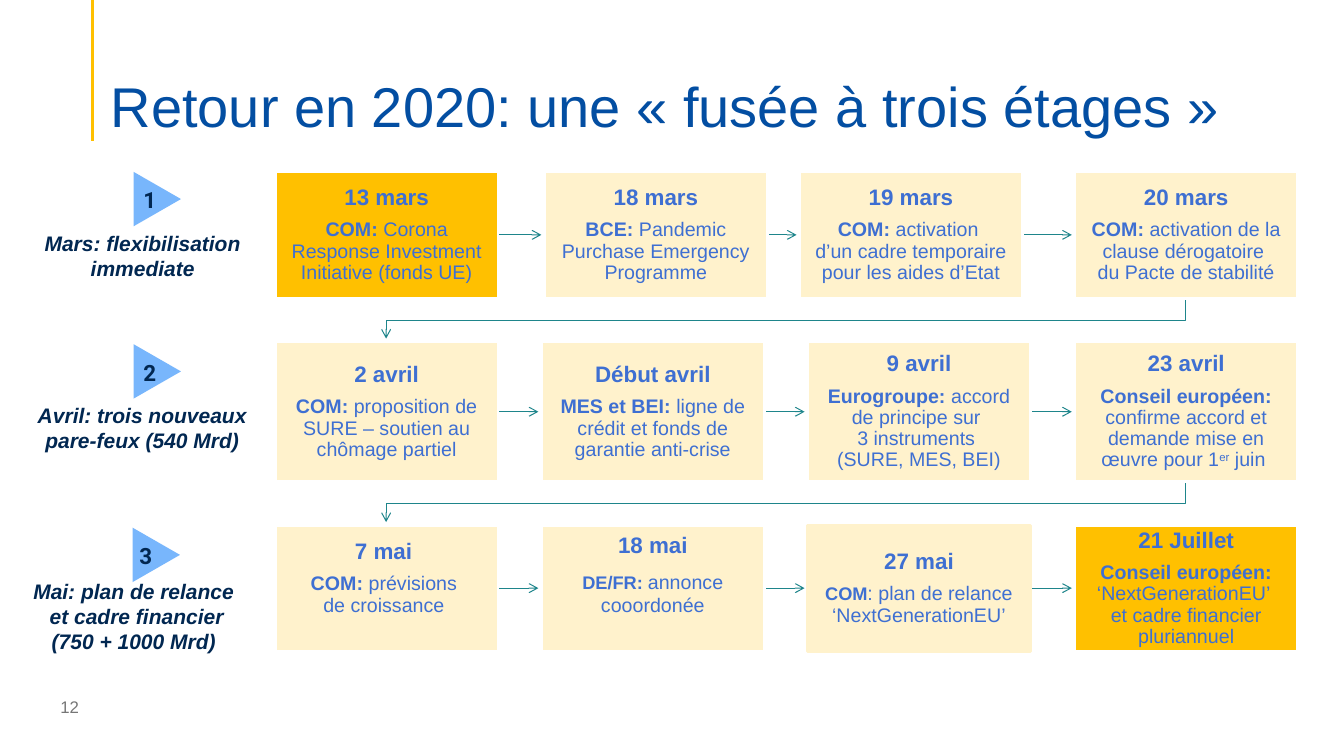
import pptx
import pptx.util
import pptx.dml.color
import pptx.enum.shapes
import pptx.enum.text
import pptx.oxml
import pptx.oxml.ns

PX = 9144  # 100 px to the inch
COLORS = {
    "title": "034EA2", "gold": "FFC000", "cream": "FFF2CC", "white": "FFFFFF",
    "card text": "3E6FD2", "arrow": "1E858B", "badge": "78B6FC",
    "stage text": "012751", "page number": "767676",
}
SHAPES = pptx.enum.shapes.MSO_SHAPE
ALIGN = pptx.enum.text.PP_ALIGN
ANCHOR = pptx.enum.text.MSO_ANCHOR
qn = pptx.oxml.ns.qn

CARD_WIDTH = 221
EVEN_LEFTS = (273, 537, 801, 1066)
ARROW_GAP = 3

# Stage: label box, label, badge corner, number left, row top, row height, card lefts, cards
# Card: date, lead, body, then optional settings; ^ surrounds superscript
STAGES = [
    ((20, 224, 243, 61), "Mars: flexibilisation immediate", (129, 174), 90,
     170, 126, (273, 540, 793, 1066), [
        ("13 mars", "COM: ", "Corona Response Investment Initiative (fonds UE)", {"fill": "gold"}),
        ("18 mars", "BCE: ", "Pandemic Purchase Emergency Programme", {}),
        ("19 mars", "COM: ", "activation \nd’un cadre temporaire pour les aides d’Etat", {}),
        ("20 mars", "COM: ", "activation de la clause dérogatoire \ndu Pacte de stabilité", {}),
     ]),
    ((26, 394, 236, 61), "Avril: trois nouveaux \vpare-feux (540 Mrd) ", (129, 345), 90,
     339, 139, EVEN_LEFTS, [
        ("2 avril", "COM: ", "proposition de SURE – soutien au chômage partiel", {}),
        ("Début avril", "MES et BEI: ", "ligne de crédit et fonds de garantie anti-crise", {}),
        ("9 avril", "Eurogroupe: ",
         "accord de principe sur \n3 instruments \n(SURE, MES, BEI)", {}),
        ("23 avril", "Conseil européen: ",
         "confirme accord et demande mise en œuvre pour 1^er^ juin ", {}),
     ]),
    ((20, 569, 231, 86), "Mai: plan de relance \vet cadre financier\v(750 + 1000 Mrd) ",
     (128, 527), 86, 521, 125, EVEN_LEFTS, [
        ("7 mai ", "COM: ", "prévisions \nde croissance ", {"lift": 20}),
        ("18 mai", "DE/FR: ", "annonce cooordonée",
         {"lift": 28, "lead_size": 13, "spacing": 1, "gap": 8}),
        ("27 mai", "COM", ": plan de relance ‘NextGenerationEU’",
         {"lead_size": 13, "border": "cream"}),
        ("21 Juillet", "Conseil européen: ",
         "‘NextGenerationEU’ \net cadre financier pluriannuel", {"fill": "gold"}),
     ]),
]


def rgb(name):
    return pptx.dml.color.RGBColor.from_string(COLORS[name])


def scaled(*lengths):
    return [length * PX for length in lengths]


def style(span, size, color, bold=False, italic=False, face="Arial"):
    font = span.font
    font.name, font.size, font.bold, font.italic = face, pptx.util.Pt(size), bold, italic
    font.color.rgb = rgb(color)


def size_breaks(para, size):
    for line_break in para._p.findall(qn("a:br")):
        properties = pptx.oxml.parse_xml(
            f'<a:rPr {pptx.oxml.ns.nsdecls("a")} sz="{size * 100}"/>')
        line_break.append(properties)


def add_label(page, box, text, size, color, align=ALIGN.LEFT, anchor=ANCHOR.TOP,
              spacing=1, bottom=5, **font):
    label = page.shapes.add_textbox(*scaled(*box))
    frame = label.text_frame
    frame.word_wrap = True
    frame.vertical_anchor = anchor
    frame.margin_bottom = bottom * PX
    frame.text = text
    para = frame.paragraphs[0]
    para.alignment = align
    para.line_spacing = spacing
    for span in para.runs:
        style(span, size, color, **font)
    size_breaks(para, size)


def finish_arrow(line_shape):
    line_shape.line.color.rgb = rgb("arrow")
    line_shape.line.width = pptx.util.Pt(0.75)
    namespace = pptx.oxml.ns.nsdecls("a")
    line_shape.line._get_or_add_ln().append(
        pptx.oxml.parse_xml(f'<a:tailEnd {namespace} type="arrow"/>'))


def add_straight_arrow(page, start, end, y):
    arrow = page.shapes.add_connector(
        pptx.enum.shapes.MSO_CONNECTOR.STRAIGHT, *scaled(start, y, end, y))
    finish_arrow(arrow)
    arrow._element.spPr.append(
        pptx.oxml.parse_xml(f'<a:effectLst {pptx.oxml.ns.nsdecls("a")}/>'))


def add_return_arrow(page, start_x, start_y, end_x, end_y):
    turn_y = start_y + 22
    builder = page.shapes.build_freeform(start_x, start_y, scale=PX)
    builder.add_line_segments(
        [(start_x, turn_y), (end_x, turn_y), (end_x, end_y)], close=False)
    arrow = builder.convert_to_shape()
    arrow.shadow.inherit = False
    arrow.fill.background()
    finish_arrow(arrow)


def add_card(page, box, date, lead, body, fill="cream", border="white", lift=0,
             lead_size=14, spacing=0.9, gap=7):
    card = page.shapes.add_shape(SHAPES.RECTANGLE, *scaled(*box))
    card.shadow.inherit = False
    card.fill.solid()
    card.fill.fore_color.rgb = rgb(fill)
    card.line.color.rgb = rgb(border)
    card.line.width = pptx.util.Pt(2)
    frame = card.text_frame
    frame.word_wrap = True
    frame.vertical_anchor = ANCHOR.MIDDLE
    frame.margin_left = frame.margin_right = frame.margin_top = 12 * PX
    frame.margin_bottom = (12 + lift) * PX
    frame.text = f"{date}\n{lead}"
    heading, para = frame.paragraphs
    heading.space_after = pptx.util.Pt(gap)
    for item in (heading, para):
        item.alignment = ALIGN.CENTER
        item.line_spacing = spacing
    style(heading.runs[0], 16, "card text", bold=True)
    style(para.runs[0], lead_size, "card text", bold=True)
    for row, line in enumerate(body.split("\n")):
        if row:
            para.add_line_break()
        for part, text in enumerate(line.split("^")):
            span = para.add_run()
            span.text = text
            style(span, 14, "card text")
            if part % 2:
                span._r.get_or_add_rPr().set("baseline", "30000")
    size_breaks(para, 14)


def add_card_row(page, top, height, lefts, cards):
    for left, following in zip(lefts, lefts[1:]):
        add_straight_arrow(page, left + CARD_WIDTH, following - ARROW_GAP, top + height / 2)
    for left, (date, lead, body, settings) in zip(lefts, cards):
        add_card(page, (left, top, CARD_WIDTH, height), date, lead, body, **settings)


def add_stage_label(page, box, text, badge, number_left, number):
    add_label(page, box, text, 15, "stage text", ALIGN.CENTER, bold=True, italic=True)
    left, top = badge
    triangle = page.shapes.add_shape(
        SHAPES.ISOSCELES_TRIANGLE, *scaled(left, top, 54, 47))
    triangle.rotation = 90
    triangle.shadow.inherit = False
    triangle.fill.solid()
    triangle.fill.fore_color.rgb = rgb("badge")
    triangle.line.fill.background()
    add_label(page, (number_left, top + 6, 117, 37), str(number), 16, "stage text",
              ALIGN.CENTER, bold=True, face="Roboto")


def add_header(page, box):
    left, top, width, height = box
    rule = page.shapes.add_connector(
        pptx.enum.shapes.MSO_CONNECTOR.STRAIGHT, *scaled(left - 8, 0, left - 8, top + height + 1))
    rule.line.color.rgb = rgb("gold")
    rule.line.width = pptx.util.Pt(2.25)
    rule._element.spPr.append(
        pptx.oxml.parse_xml(f'<a:effectLst {pptx.oxml.ns.nsdecls("a")}/>'))
    add_label(page, box, "Retour en 2020: une « fusée à trois étages »", 40, "title",
              anchor=ANCHOR.BOTTOM, spacing=0.9, bottom=0)


def main():
    deck = pptx.Presentation()
    deck.slide_width, deck.slide_height = scaled(1333, 750)
    page = deck.slides.add_slide(deck.slide_layouts[6])
    add_header(page, (100, 53, 1220, 86))

    # Links from the end of each row to the start of the next
    for stage, following in zip(STAGES, STAGES[1:]):
        top, height, lefts = stage[4:7]
        add_return_arrow(page, lefts[-1] + CARD_WIDTH // 2, top + height,
                         following[6][0] + CARD_WIDTH // 2, following[4] - ARROW_GAP)

    # Three stages
    for number, stage in enumerate(STAGES, 1):
        label_box, label, badge, number_left, top, height, lefts, cards = stage
        add_card_row(page, top, height, lefts, cards)
        add_stage_label(page, label_box, label, badge, number_left, number)

    # Page number
    add_label(page, (50, 681, 300, 40), "12", 12, "page number", anchor=ANCHOR.MIDDLE)
    deck.save("out.pptx")


if __name__ == "__main__":
    main()
